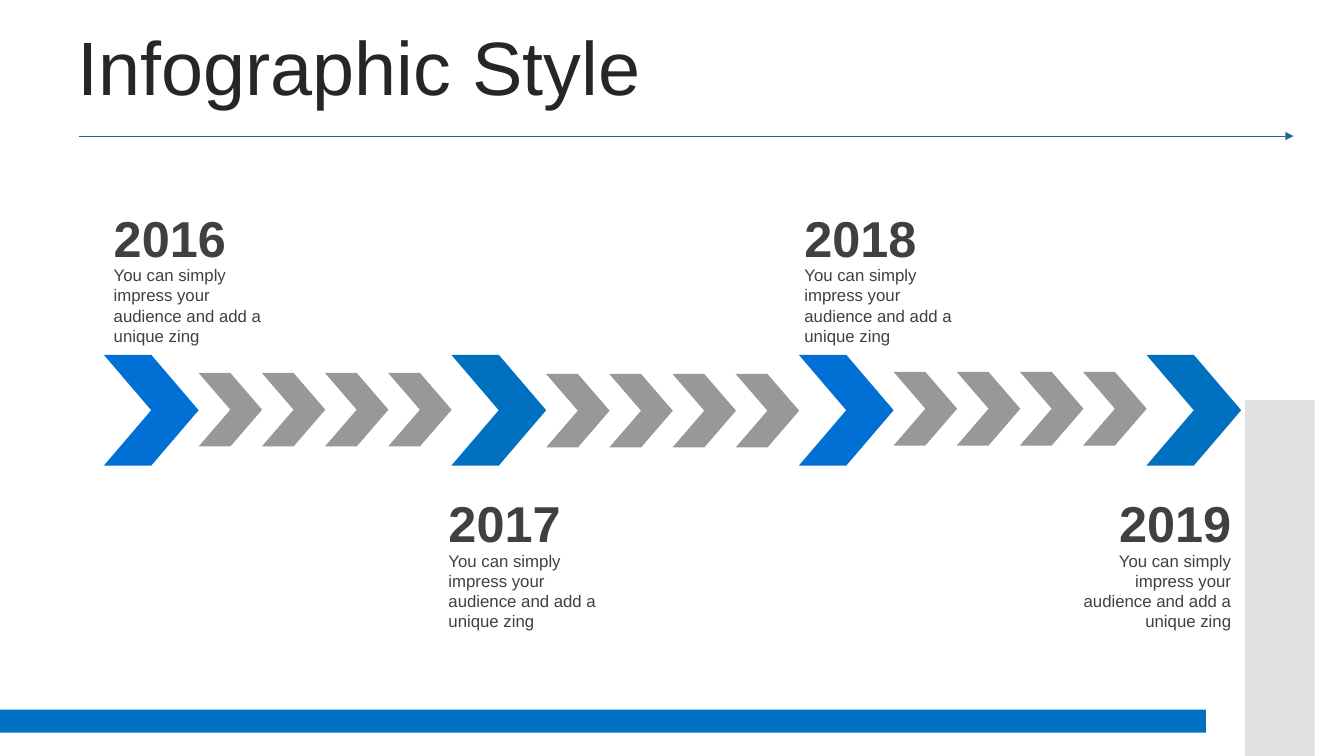
from lxml import etree
from pptx import Presentation
from pptx.dml.color import RGBColor
from pptx.enum import shapes, text
from pptx.oxml import ns
from pptx.util import Inches, Pt

TITLE = "Infographic Style"
MESSAGE = "You can simply impress your audience and add a unique zing"
COLORS = {
    "title": "262626",
    "body": "404040",
    "bright": "0070D4",
    "deep": "0070C0",
    "step": "989898",
    "panel": "E0E0E0",
    "rule": "216990",
}
MILESTONES = [
    {"year": "2016", "color": "bright", "left": 1.03, "top": 2.0, "step_top": 3.7},
    {"year": "2017", "color": "deep", "left": 4.35, "top": 4.83, "step_top": 3.71},
    {"year": "2018", "color": "bright", "left": 7.88, "top": 2.0, "step_top": 3.69},
    {"year": "2019", "color": "deep", "left": 10.44, "top": 4.83, "step_top": None},
]
TIMELINE_LEFT, TIMELINE_TOP = 1.03, 3.52
MARKER_WIDTH, MARKER_HEIGHT = 0.94, 1.1
STEP_WIDTH, STEP_HEIGHT = 0.63, 0.73
STEPS = 4
LAST_MARKER_LEFT = 11.37
PITCH = (LAST_MARKER_LEFT - TIMELINE_LEFT) / (len(MILESTONES) - 1)
STEP_PITCH = (PITCH - MARKER_WIDTH) / STEPS
LABEL_WIDTH, LABEL_HEIGHT, MESSAGE_OFFSET = 1.87, 0.71, 0.58


def rgb(color):
    return RGBColor.from_string(COLORS[color])


def add_block(slide, kind, box, color):
    block = slide.shapes.add_shape(kind, *map(Inches, box))
    block.shadow.inherit = False
    block.fill.solid()
    block.fill.fore_color.rgb = rgb(color)
    block.line.fill.background()


def add_label(slide, wording, box, size, color, bold=False, middle=False, right=False):
    frame = slide.shapes.add_textbox(*map(Inches, box)).text_frame
    frame.word_wrap = True
    frame.vertical_anchor = text.MSO_ANCHOR.MIDDLE if middle else text.MSO_ANCHOR.TOP
    paragraph = frame.paragraphs[0]
    paragraph.text = wording
    paragraph.alignment = text.PP_ALIGN.RIGHT if right else text.PP_ALIGN.LEFT
    paragraph.font.name = "Arial"
    paragraph.font.size = Pt(size)
    paragraph.font.bold = bold
    paragraph.font.color.rgb = rgb(color)
    return paragraph


def add_rule(slide):
    rule = slide.shapes.add_connector(
        shapes.MSO_CONNECTOR.STRAIGHT, *map(Inches, (0.78, 1.35, 12.83, 1.35)))
    rule.line.color.rgb = rgb("rule")
    rule.line.width = Pt(0.5)
    etree.SubElement(rule.line._get_or_add_ln(), ns.qn("a:tailEnd"), type="triangle")
    etree.SubElement(rule._element.spPr, ns.qn("a:effectLst"))


def add_milestone(slide, index, milestone):
    chevron = shapes.MSO_SHAPE.CHEVRON
    marker_left = TIMELINE_LEFT + index * PITCH
    add_block(slide, chevron,
              (marker_left, TIMELINE_TOP, MARKER_WIDTH, MARKER_HEIGHT), milestone["color"])
    last = index == len(MILESTONES) - 1
    if not last:
        for step in range(STEPS):
            step_left = marker_left + MARKER_WIDTH + step * STEP_PITCH
            add_block(slide, chevron,
                      (step_left, milestone["step_top"], STEP_WIDTH, STEP_HEIGHT), "step")
    left, top = milestone["left"], milestone["top"]
    add_label(slide, milestone["year"], (left, top, LABEL_WIDTH, LABEL_HEIGHT),
              36, "body", bold=True, middle=True, right=last)
    add_label(slide, MESSAGE, (left, top + MESSAGE_OFFSET, LABEL_WIDTH, LABEL_HEIGHT),
              12, "body", right=last)


def main():
    deck = Presentation()
    deck.slide_width, deck.slide_height = Inches(13.33), Inches(7.5)
    slide = deck.slides.add_slide(deck.slide_layouts[6])
    rectangle = shapes.MSO_SHAPE.RECTANGLE
    add_block(slide, rectangle, (12.35, 3.97, 0.69, 3.53), "panel")
    add_block(slide, rectangle, (-0.02, 7.04, 11.98, 0.23), "deep")
    title = add_label(slide, TITLE, (0.67, 0.31, 12.34, 0.79), 54, "title", middle=True)
    title.line_spacing = 0.9
    title.space_before = Pt(10)
    for index, milestone in enumerate(MILESTONES):
        add_milestone(slide, index, milestone)
    add_rule(slide)
    deck.save("out.pptx")


if __name__ == "__main__":
    main()
